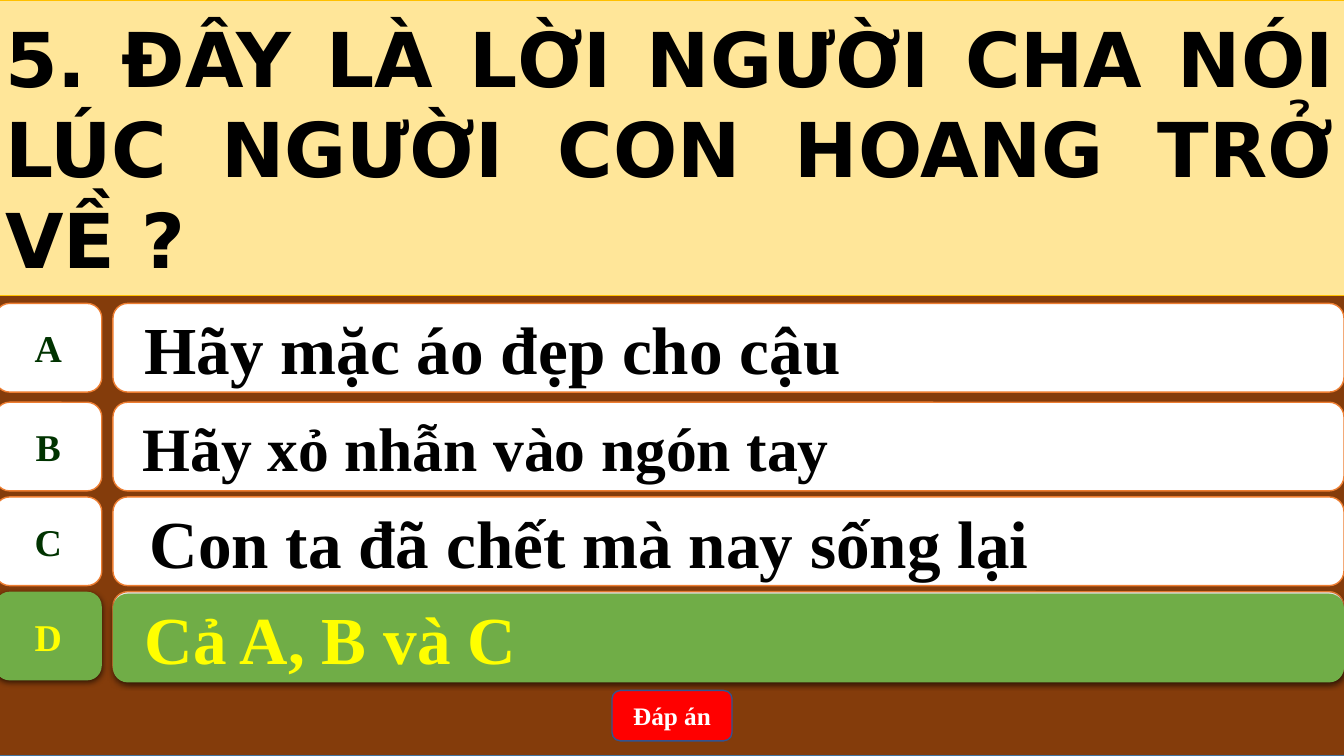
from lxml import etree
from pptx import Presentation
from pptx.dml.color import RGBColor
from pptx.enum.shapes import MSO_SHAPE as Preset
from pptx.enum.text import MSO_ANCHOR as Anchor, MSO_AUTO_SIZE as AutoSize, PP_ALIGN as Align
from pptx.oxml import parse_xml
from pptx.oxml.ns import nsdecls
from pptx.util import Inches, Pt

QUESTION = "5. ĐÂY LÀ LỜI NGƯỜI CHA NÓI LÚC NGƯỜI CON HOANG TRỞ VỀ ?"
ANSWERS = [
    {"letter": "A", "text": "Hãy mặc áo đẹp cho cậu", "top": 3.01, "size": 48, "inset": 0.27},
    {"letter": "B", "text": "Hãy xỏ nhẫn vào ngón tay", "top": 3.99, "size": 44, "inset": 0.25},
    {"letter": "C", "text": "Con ta đã chết mà nay sống lại", "top": 4.93, "size": 48, "inset": 0.32},
    {"letter": "D", "text": "Cả A, B và C", "top": 5.87, "size": 48, "inset": 0.27},
]
CORRECT_LETTER = "D"
BUTTON_TEXT = "Đáp án"

BROWN = RGBColor(0x84, 0x3C, 0x0B)
STEEL_BLUE = RGBColor(0x43, 0x73, 0x9E)
CREAM = RGBColor(0xFF, 0xE6, 0x99)
GOLD = RGBColor(0xFF, 0xC0, 0x00)
ORANGE = RGBColor(0xED, 0x7D, 0x31)
GREEN = RGBColor(0x70, 0xAD, 0x47)
DARK_GREEN = RGBColor(0x00, 0x33, 0x00)
YELLOW = RGBColor(0xFF, 0xFF, 0x00)
RED = RGBColor(0xFF, 0x00, 0x00)
NAVY = RGBColor(0x32, 0x54, 0x91)
WHITE = RGBColor(0xFF, 0xFF, 0xFF)
BLACK = RGBColor(0x00, 0x00, 0x00)

SERIF = "Times New Roman"
SANS = "DejaVu Sans"
LEFT, FULL_WIDTH = -0.05, 13.39
LETTER_WIDTH, ROW_HEIGHT = 1.06, 0.88
ANSWER_LEFT, ANSWER_WIDTH = 1.12, 12.21
HIGHLIGHT_DROP = 0.02


def style(shape, fill, line=None, line_width=1):
    shape.fill.solid()
    shape.fill.fore_color.rgb = fill
    if line is None:
        shape.line.fill.background()
    else:
        shape.line.color.rgb = line
        shape.line.width = Pt(line_width)


def add_box(slide, preset, left, top, width, height, fill, line=None):
    shape = slide.shapes.add_shape(preset, Inches(left), Inches(top), Inches(width), Inches(height))
    shape.shadow.inherit = False
    style(shape, fill, line)
    return shape


def write(shape, text, size, color, font=SERIF, align=Align.CENTER, inset=0.1, wrap=True):
    frame = shape.text_frame
    frame.word_wrap = wrap
    frame.auto_size = AutoSize.NONE
    frame.vertical_anchor = Anchor.MIDDLE
    frame.margin_left = Inches(inset)
    paragraph = frame.paragraphs[0]
    paragraph.alignment = align
    run = paragraph.add_run()
    run.text = text
    run.font.name = font
    run.font.size = Pt(size)
    run.font.bold = True
    run.font.color.rgb = color


def add_drop_shadow(shape):
    effects = shape.element.spPr.find("{*}effectLst")
    effects.append(parse_xml(
        f'<a:outerShdw {nsdecls("a")} blurRad="{Pt(4.5)}" dist="{Pt(1.5)}" dir="5400000" '
        'algn="t" rotWithShape="0"><a:srgbClr val="000000"><a:alpha val="63000"/>'
        '</a:srgbClr></a:outerShdw>'
    ))


def add_answer(slide, answer):
    correct = answer["letter"] == CORRECT_LETTER
    top = answer["top"]
    answer_box = (ANSWER_LEFT, top, ANSWER_WIDTH, ROW_HEIGHT)
    fill, line = WHITE, ORANGE
    if correct:
        add_box(slide, Preset.ROUNDED_RECTANGLE, *answer_box, fill, line)
        answer_box = (ANSWER_LEFT, top + HIGHLIGHT_DROP, ANSWER_WIDTH, ROW_HEIGHT)
        fill, line = GREEN, None
    body = add_box(slide, Preset.ROUNDED_RECTANGLE, *answer_box, fill, line)
    write(body, answer["text"], answer["size"], YELLOW if correct else BLACK,
          align=Align.LEFT, inset=answer["inset"])
    letter = add_box(slide, Preset.FLOWCHART_ALTERNATE_PROCESS, LEFT, top,
                     LETTER_WIDTH, ROW_HEIGHT, fill, line)
    write(letter, answer["letter"], 27, YELLOW if correct else DARK_GREEN, wrap=False)
    if correct:
        add_drop_shadow(body)
        add_drop_shadow(letter)


def add_question(slide):
    title = slide.shapes.title
    title.left, title.top = Inches(LEFT), Inches(0)
    title.width, title.height = Inches(FULL_WIDTH), Inches(2.93)
    style(title, CREAM, GOLD, 0.5)
    write(title, QUESTION, 54, BLACK, font=SANS, align=Align.JUSTIFY)
    title.element.getparent().append(title.element)


def main():
    presentation = Presentation()
    presentation.slide_width, presentation.slide_height = Inches(13.33), Inches(7.5)
    slide = presentation.slides.add_slide(presentation.slide_layouts[5])
    add_box(slide, Preset.RECTANGLE, LEFT, 0, FULL_WIDTH, 7.5, BROWN, STEEL_BLUE)
    add_question(slide)
    for answer in ANSWERS:
        add_answer(slide, answer)
    button = add_box(slide, Preset.ROUNDED_RECTANGLE, 6.07, 6.85, 1.19, 0.5, RED, NAVY)
    write(button, BUTTON_TEXT, 18, WHITE)
    presentation.save("out.pptx")


if __name__ == "__main__":
    main()
